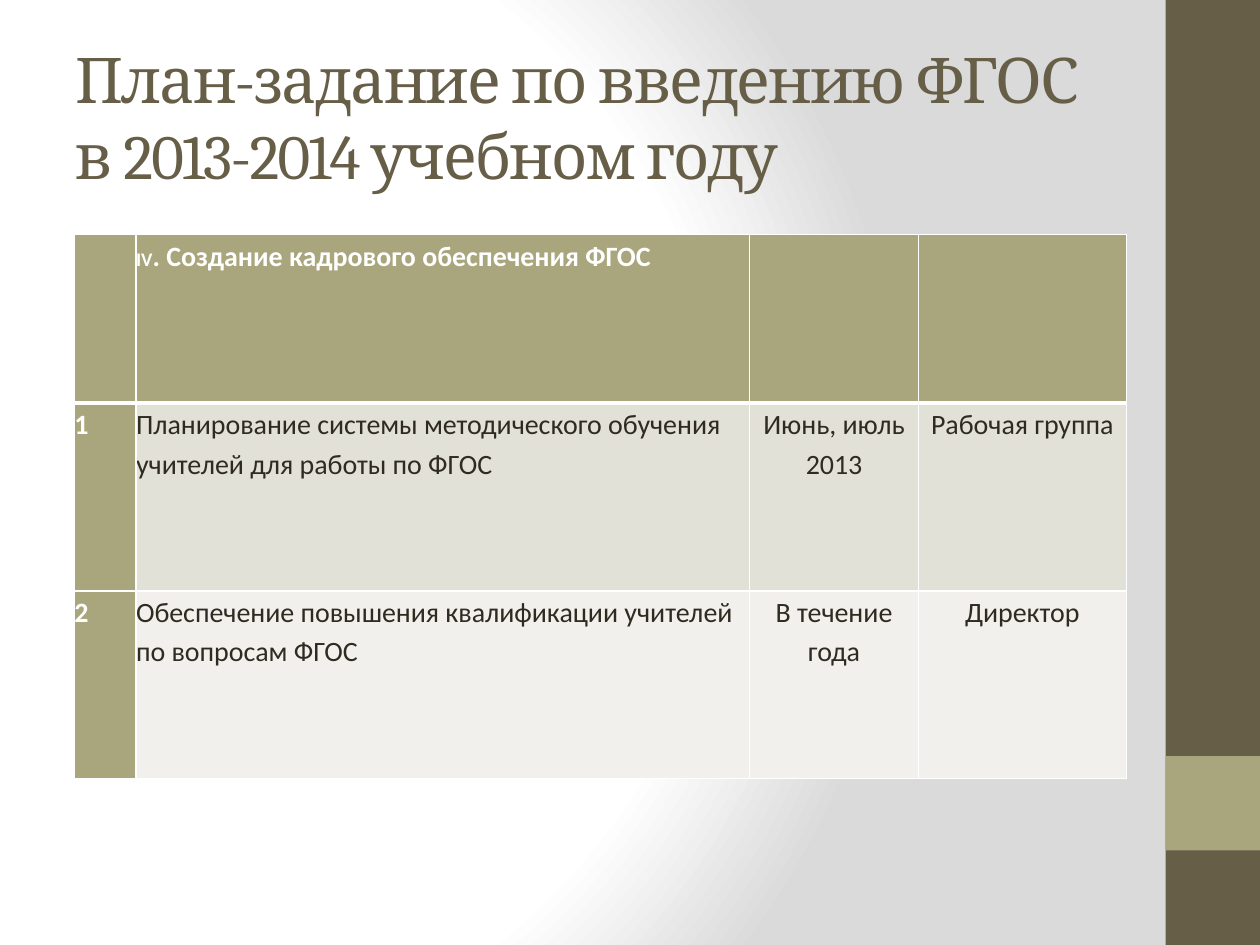
from pptx import Presentation
from pptx.dml.color import RGBColor
from pptx.enum.shapes import MSO_SHAPE
from pptx.enum.text import MSO_ANCHOR, PP_ALIGN
from pptx.oxml import parse_xml
from pptx.oxml.ns import nsdecls, qn
from pptx.util import Inches, Pt

THEME = {
    "white": "FFFFFF", "grey": "DADADA", "brown": "675E47", "olive": "A9A57C",
    "ink": "2F2B20", "bands": ("E2E1D7", "F1F0EC"),
    "title_font": "Cambria", "body_font": "Calibri",
    "title_size": 36, "body_size": 16, "numeral_size": 11,
    "border": 1, "header_border": 3,
}

TITLE = "План-задание по введению ФГОС в 2013-2014 учебном году"
NUMERAL, HEADING = "IV", ". Создание кадрового обеспечения ФГОС"
ROWS = [
    ("", NUMERAL + HEADING, "", ""),
    ("1", "Планирование системы методического обучения учителей для работы по ФГОС",
     "Июнь, июль 2013", "Рабочая группа"),
    ("2", "Обеспечение повышения квалификации учителей по вопросам ФГОС",
     "В течение года", "Директор"),
]
COL_WIDTHS = (0.49, 4.87, 1.34, 1.65)
ROW_HEIGHTS = (1.34, 1.49, 1.49)
SIDEBAR = [((9.25, 0, 0.75, 7.5), "brown"), ((9.25, 6, 0.75, 0.75), "olive")]


def rgb(value):
    return RGBColor.from_string(value)


def add_run(p, text, font, size, color, bold=False):
    r = p.add_run()
    r.text = text
    r.font.name, r.font.size, r.font.bold = font, Pt(size), bold
    r.font.color.rgb = rgb(color)
    return r


def set_background(s):
    """Circular gradient, white out to three quarters and then grey."""
    stops = "".join(
        f'<a:gs pos="{pos * 1000}"><a:srgbClr val="{THEME[name]}"/></a:gs>'
        for pos, name in ((0, "white"), (75, "white"), (100, "grey")))
    s.background.fill.solid()
    bg = s._element.find(".//" + qn("p:bgPr"))
    bg.replace(bg[0], parse_xml(
        f'<a:gradFill {nsdecls("a")} rotWithShape="1"><a:gsLst>{stops}</a:gsLst>'
        '<a:path path="circle"><a:fillToRect l="20000" t="50000" r="100000" b="50000"/>'
        '</a:path></a:gradFill>'))


def add_sidebar(s):
    for box, color in SIDEBAR:
        sp = s.shapes.add_shape(MSO_SHAPE.RECTANGLE, *map(Inches, box))
        sp.shadow.inherit = False
        sp.fill.solid()
        sp.fill.fore_color.rgb = rgb(THEME[color])
        sp.line.fill.background()


def add_title(s):
    tf = s.shapes.add_textbox(*map(Inches, (0.5, 0.3, 8.33, 1.25))).text_frame
    tf.word_wrap = True
    tf.vertical_anchor = MSO_ANCHOR.MIDDLE
    r = add_run(tf.paragraphs[0], TITLE, THEME["title_font"], THEME["title_size"], THEME["brown"])
    r.font._element.set("spc", "-100")


def set_borders(cell, row):
    """White lines, with a heavy one between the header and the body."""
    heavy = {0: "B", 1: "T"}.get(row)
    tcPr = cell._tc.get_or_add_tcPr()
    for i, side in enumerate("LRTB"):
        width = Pt(THEME["header_border"] if side == heavy else THEME["border"])
        tcPr.insert(i, parse_xml(
            f'<a:ln{side} {nsdecls("a")} w="{width}"><a:solidFill>'
            f'<a:srgbClr val="{THEME["white"]}"/></a:solidFill></a:ln{side}>'))


def fill_cell(cell, row, col, text):
    accent = row == 0 or col == 0
    cell.fill.solid()
    cell.fill.fore_color.rgb = rgb(THEME["olive"] if accent else THEME["bands"][row - 1])
    cell.margin_left = cell.margin_right = cell.margin_top = cell.margin_bottom = 0
    set_borders(cell, row)
    if not text:
        return
    p = cell.text_frame.paragraphs[0]
    p.line_spacing = 1.15
    if col > 1:
        p.alignment = PP_ALIGN.CENTER
    font, size = THEME["body_font"], THEME["body_size"]
    color = THEME["white"] if accent else THEME["ink"]
    if row == 0:
        add_run(p, NUMERAL, font, THEME["numeral_size"], color, True)
        text = HEADING
    add_run(p, text, font, size, color, accent)


def add_plan_table(s):
    box = (0.59, 1.86, sum(COL_WIDTHS), sum(ROW_HEIGHTS))
    table = s.shapes.add_table(len(ROWS), len(COL_WIDTHS), *map(Inches, box)).table
    table.first_col = True
    for column, width in zip(table.columns, COL_WIDTHS):
        column.width = Inches(width)
    for i, (height, texts) in enumerate(zip(ROW_HEIGHTS, ROWS)):
        table.rows[i].height = Inches(height)
        for j, text in enumerate(texts):
            fill_cell(table.cell(i, j), i, j, text)


def main():
    prs = Presentation()
    prs.slide_width, prs.slide_height = Inches(10), Inches(7.5)
    s = prs.slides.add_slide(prs.slide_layouts[6])
    set_background(s)
    add_sidebar(s)
    add_title(s)
    add_plan_table(s)
    prs.save("out.pptx")


if __name__ == "__main__":
    main()
